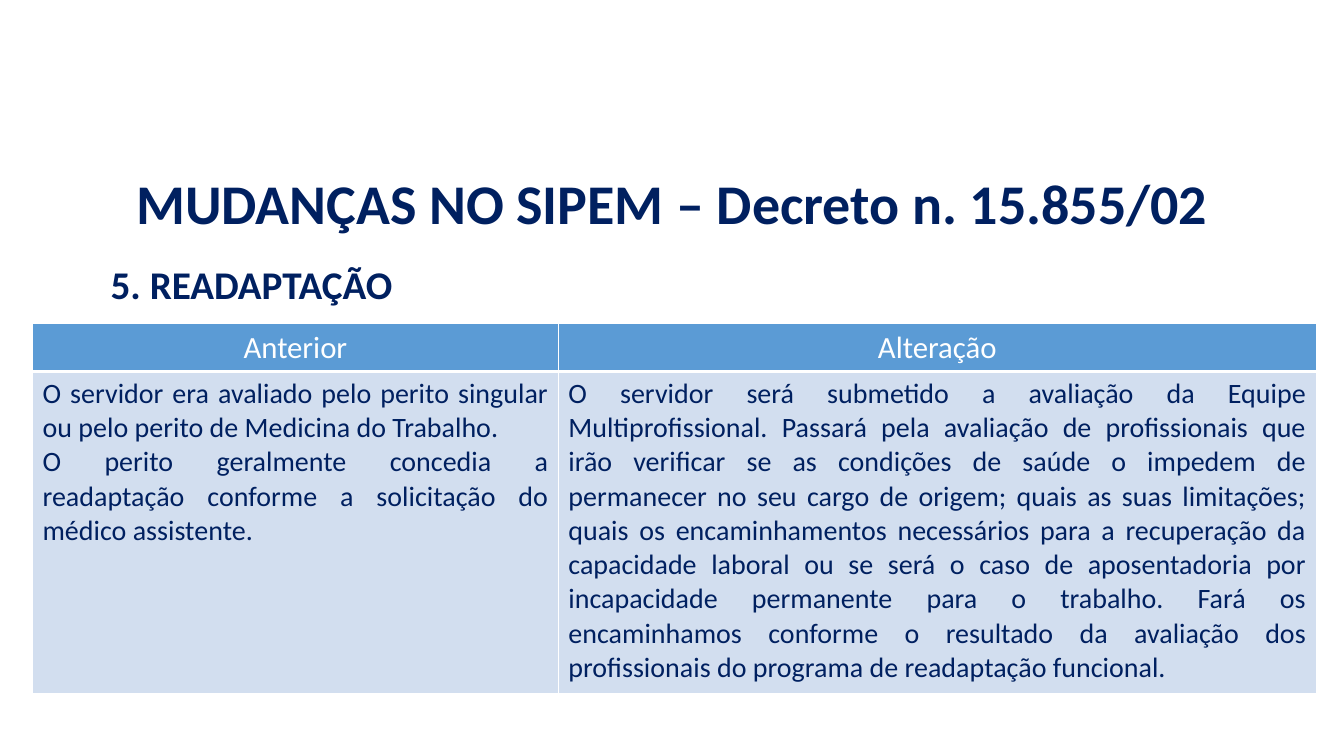
"""Build the slide on the changes to SIPEM readaptation rules."""
import pptx
import pptx.dml.color
import pptx.enum.text
import pptx.oxml
import pptx.oxml.ns
import pptx.util

Cm = pptx.util.Cm
Pt = pptx.util.Pt
RGB = pptx.dml.color.RGBColor
ALIGN = pptx.enum.text.PP_ALIGN
ANCHOR = pptx.enum.text.MSO_ANCHOR

NAVY = RGB(0x00, 0x20, 0x60)
BLUE = RGB(0x5B, 0x9B, 0xD5)
PALE = RGB(0xD2, 0xDE, 0xEF)
WHITE = RGB(0xFF, 0xFF, 0xFF)


def write(frame, lines, size, color, bold, align, pitch=1.0):
    """Fill a text frame with one paragraph per line."""
    for i, line in enumerate(lines):
        para = frame.add_paragraph() if i else frame.paragraphs[0]
        para.alignment = align
        para.line_spacing = pitch
        run = para.add_run()
        run.text = line
        run.font.name = "Calibri"
        run.font.size = Pt(size)
        run.font.bold = bold
        run.font.color.rgb = color


def border(cell, side, width):
    """Draw a white line on one side of a cell."""
    cell._tc.get_or_add_tcPr().append(pptx.oxml.parse_xml(
        f'<a:ln{side} {pptx.oxml.ns.nsdecls("a")} w="{Pt(width)}">'
        f'<a:solidFill><a:srgbClr val="{WHITE}"/></a:solidFill></a:ln{side}>'))


deck = pptx.Presentation()
deck.slide_width = Cm(33.87)
deck.slide_height = Cm(19.05)
slide = deck.slides.add_slide(deck.slide_layouts[6])

heads = [
    ("MUDANÇAS NO SIPEM – Decreto n. 15.855/02", 40, ALIGN.CENTER,
     ANCHOR.MIDDLE, (2.33, 4.37, 29.21, 1.65)),
    ("5. READAPTAÇÃO", 28, ALIGN.LEFT,
     ANCHOR.TOP, (2.54, 6.58, 28.78, 1.5)),
]
for text, size, align, anchor, place in heads:
    frame = slide.shapes.add_textbox(*map(Cm, place)).text_frame
    frame.word_wrap = True
    frame.vertical_anchor = anchor
    write(frame, [text], size, NAVY, True, align, 0.9)

rows = [
    [["Anterior"], ["Alteração"]],
    [
        ["O servidor era avaliado pelo perito singular ou pelo perito de "
         "Medicina do Trabalho.",
         "O perito geralmente concedia a readaptação conforme a solicitação "
         "do médico assistente."],
        ["O servidor será submetido a avaliação da Equipe Multiprofissional. "
         "Passará pela avaliação de profissionais que irão verificar se as "
         "condições de saúde o impedem de permanecer no seu cargo de origem; "
         "quais as suas limitações; quais os encaminhamentos necessários para "
         "a recuperação da capacidade laboral ou se será o caso de "
         "aposentadoria por incapacidade permanente para o trabalho. Fará os "
         "encaminhamos conforme o resultado da avaliação dos profissionais do "
         "programa de readaptação funcional."],
    ],
]
styles = [
    (22, WHITE, BLUE, ALIGN.CENTER, ANCHOR.MIDDLE, 3),
    (20, NAVY, PALE, ALIGN.JUSTIFY, ANCHOR.TOP, 1),
]
table = slide.shapes.add_table(
    2, 2, Cm(0.82), Cm(8.16), Cm(32.35), Cm(9.33)).table
for col, width in zip(table.columns, (13.25, 19.1)):
    col.width = Cm(width)
for row, height in zip(table.rows, (1.2, 8.13)):
    row.height = Cm(height)

for r, (row, style) in enumerate(zip(rows, styles)):
    size, color, fill, align, anchor, base = style
    for c, lines in enumerate(row):
        cell = table.cell(r, c)
        cell.vertical_anchor = anchor
        for side, width in zip("LRTB", (1, 1, 1, base)):
            border(cell, side, width)
        cell.fill.solid()
        cell.fill.fore_color.rgb = fill
        write(cell.text_frame, lines, size, color, False, align)

deck.save("out.pptx")
